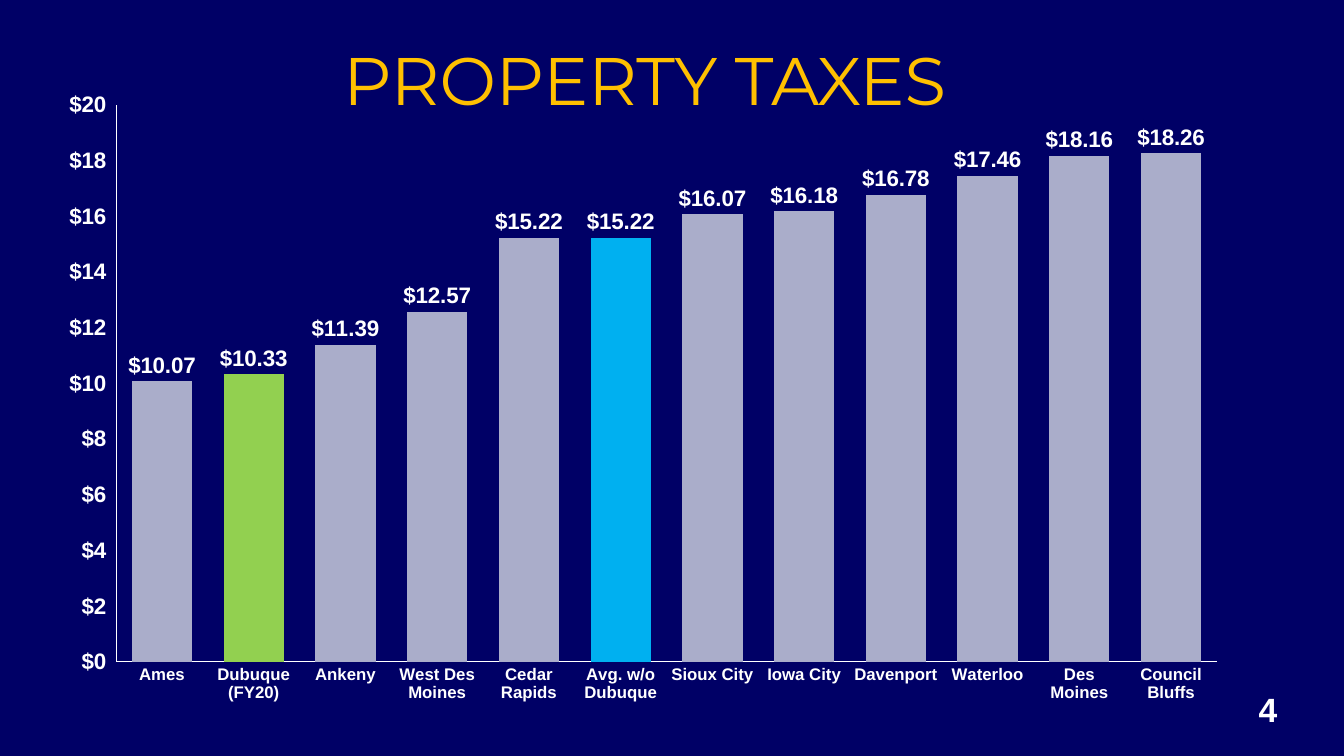
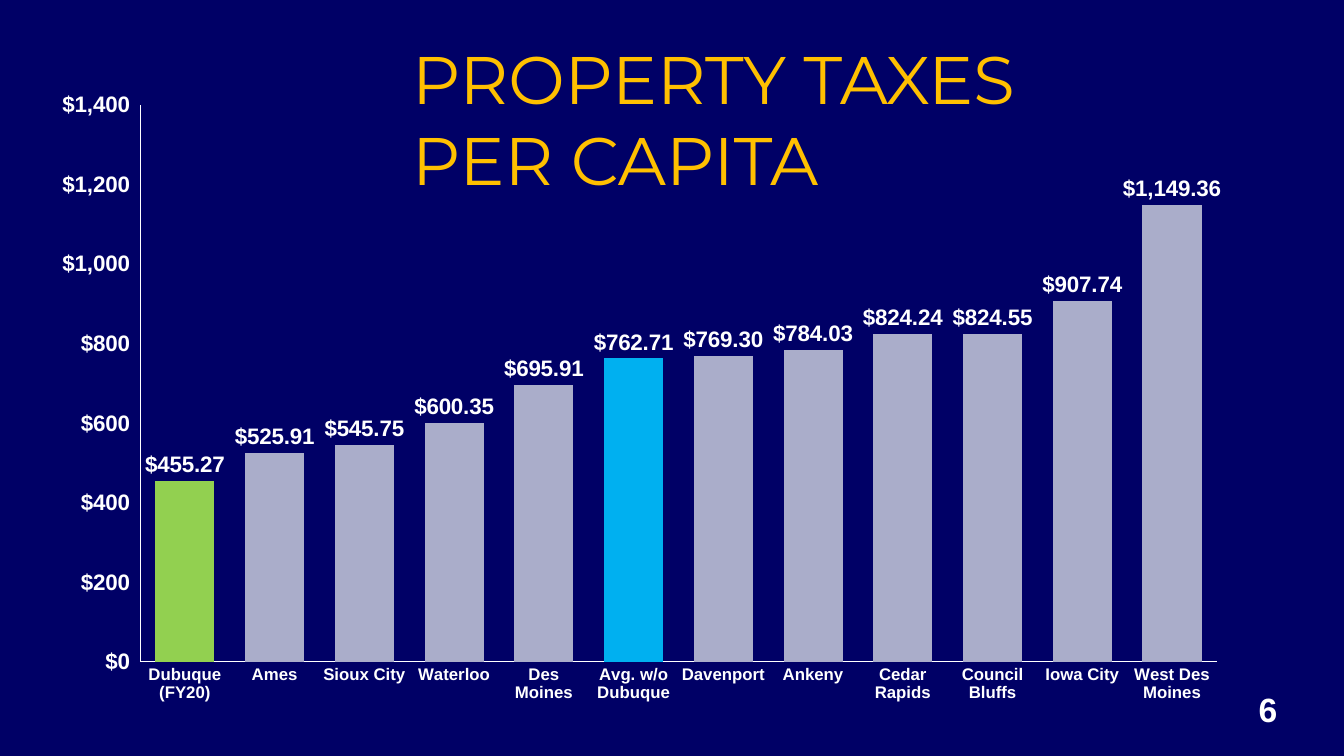
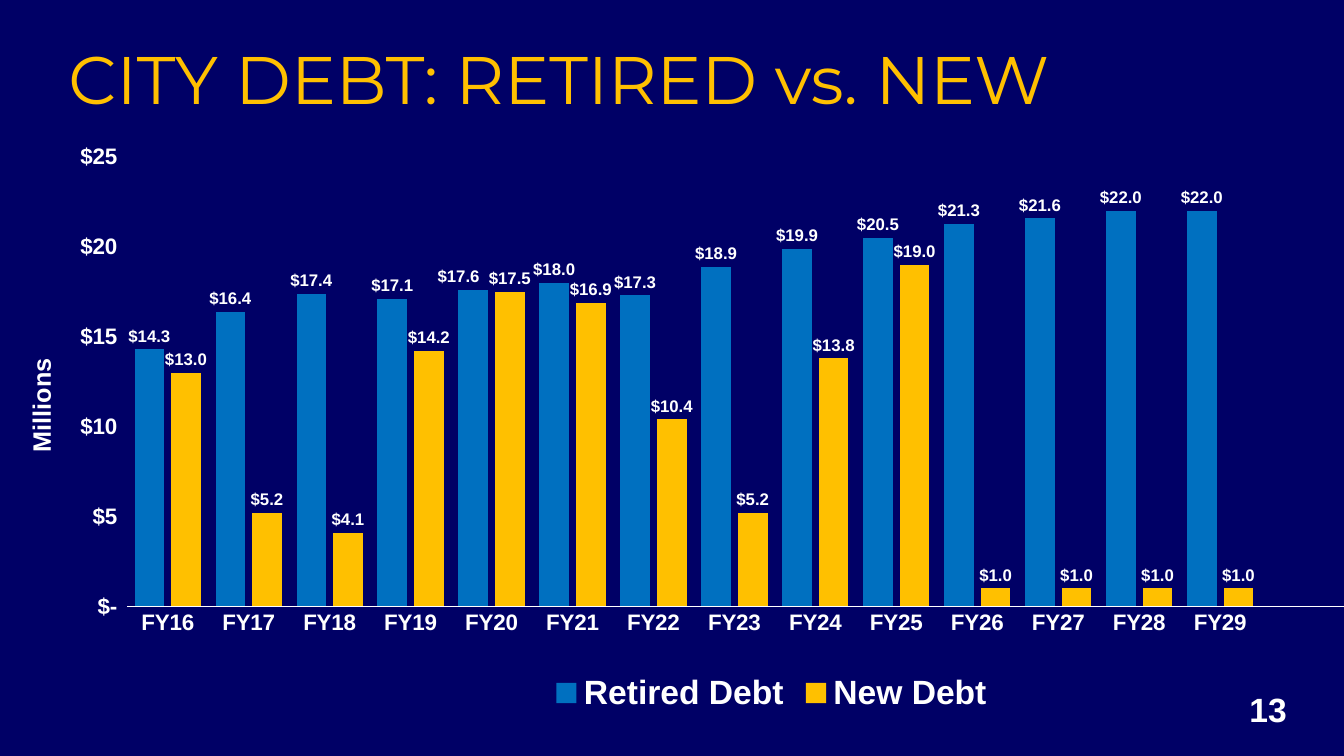
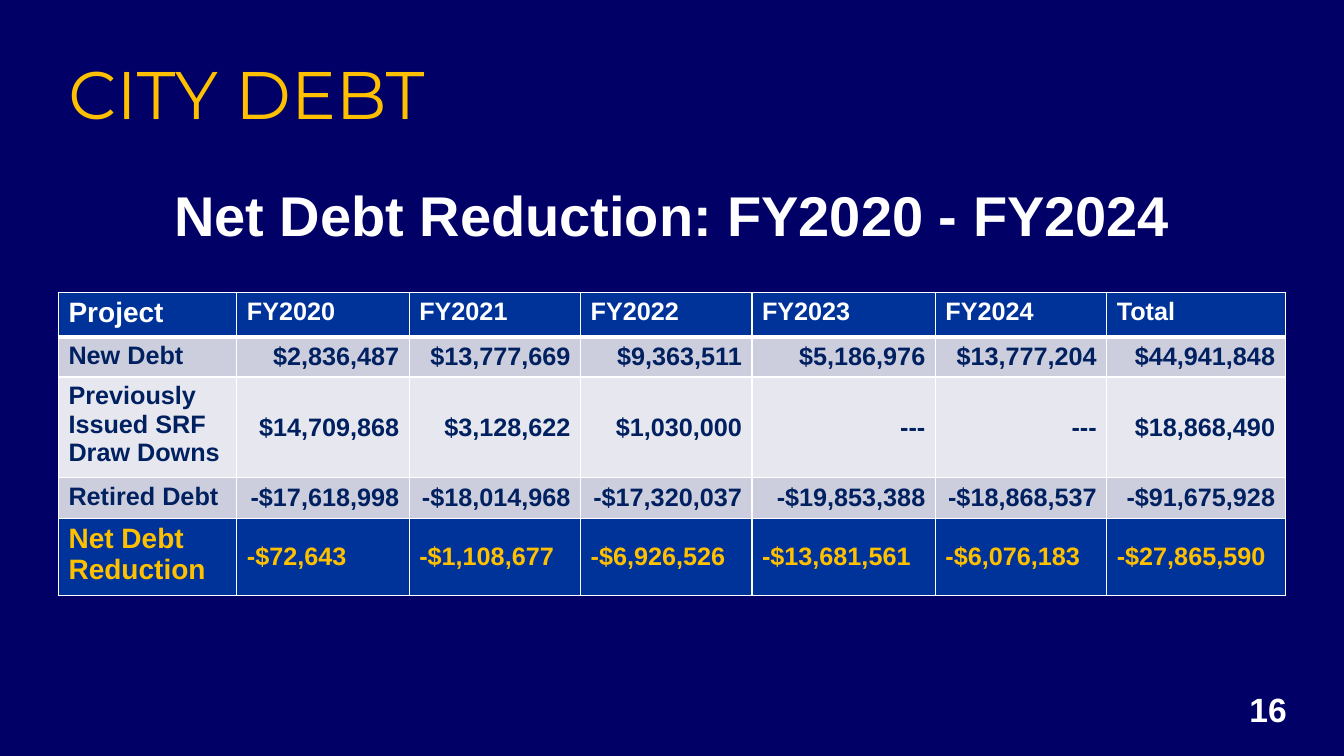
from lxml import etree
from pptx import Presentation
from pptx import util as u
from pptx.chart.data import CategoryChartData
from pptx.dml.color import RGBColor
from pptx.enum import chart as ch
from pptx.enum import text as tx
from pptx.oxml import parse_xml
from pptx.oxml.ns import nsdecls, qn

INK = {
    "navy": "000066", "white": "FFFFFF", "gold": "FFC000", "grey": "AAADCA",
    "green": "92D050", "sky": "00B0F0", "blue": "0070C0", "royal": "003399",
    "dark": "002060", "band": "CCCEDE", "pale": "E7E8EF",
}
WIDE, HIGH = u.Inches(13.33), u.Inches(7.5)
SANS, HEAD = "Arial", "Montserrat"
LEFT, MID, RIGHT = tx.PP_ALIGN.LEFT, tx.PP_ALIGN.CENTER, tx.PP_ALIGN.RIGHT

# Boxes are left, top, width and height in percent of the slide.
RANK_BOX = (3.3, 10.53, 89.03, 83.73)
DEBT_BOX = (2.93, 12.53, 108.98, 82.53)
WHOLE, CENTS, TENTHS = '"$"#,##0_)', '"$"#,##0.00', '"$"#,##0.0'


def rgb(name):
    return RGBColor.from_string(INK[name])


def scale(box):
    return [int(side * part / 100) for side, part in zip((WIDE, HIGH) * 2, box)]


def style(font, size, ink="white", bold=True, face=SANS):
    font.size, font.bold, font.name = u.Pt(size), bold, face
    font.color.rgb = rgb(ink)


def write(para, words, align, *look):
    """Add lines of text, one run each, to a paragraph."""
    para.alignment = align
    for i, line in enumerate(words.split("\n")):
        if i:
            para.add_line_break()
        run = para.add_run()
        run.text = line
        style(run.font, *look)


def label(slide, box, words, align, *look):
    shape = slide.shapes.add_textbox(*scale(box))
    shape.text_frame.word_wrap = True
    write(shape.text_frame.paragraphs[0], words, align, *look)
    return shape


def start(deck, page, title, box, align=LEFT):
    """Add a slide with its title and page number."""
    slide = deck.slides.add_slide(deck.slide_layouts[6])
    label(slide, box, title, align, 48, "gold", False, HEAD)
    label(slide, (90.6, 90.53, 7.5, 6.67), page, MID, 24)
    return slide


def layout(modes, **shares):
    """Build a manual chart layout from shares of the chart."""
    tags = [f'<c:{k} val="{v}"/>' for k, v in {**modes, **shares}.items()]
    return parse_xml(f'<c:layout {nsdecls("c")}><c:manualLayout>'
                     f'{"".join(tags)}</c:manualLayout></c:layout>')


def set_plot(chart, x, y, w, h):
    area = chart.plots[0].categories and chart.element.find(
        f'{qn("c:chart")}/{qn("c:plotArea")}')
    for old in area.findall(qn("c:layout")):
        area.remove(old)
    modes = dict(layoutTarget="inner", xMode="edge", yMode="edge")
    area.insert(0, layout(modes, x=x, y=y, w=w, h=h))


def set_axis(axis, size, line=True):
    axis.has_major_gridlines = False
    axis.major_tick_mark = axis.minor_tick_mark = ch.XL_TICK_MARK.NONE
    style(axis.tick_labels.font, size)
    if line:
        axis.format.line.color.rgb = rgb("white")
        axis.format.line.width = u.Pt(0.75)
    else:
        axis.format.line.fill.background()


def columns(slide, box, plot, cats, rows, top, step, gap, over, sizes, form,
            zero=""):
    """Add a column chart; rows hold name, colour and values,
    sizes are for categories and value labels."""
    data = CategoryChartData(number_format=form)
    data.categories = cats
    for name, _, vals in rows:
        data.add_series(name, vals)
    frame = slide.shapes.add_chart(
        ch.XL_CHART_TYPE.COLUMN_CLUSTERED, *scale(box), data)
    chart = frame.chart
    chart.has_title = chart.has_legend = False
    style(chart.font, 10, bold=False)
    set_plot(chart, *plot)
    set_axis(chart.category_axis, sizes[0])
    axis = chart.value_axis
    set_axis(axis, 16, not zero)
    axis.minimum_scale, axis.maximum_scale, axis.major_unit = 0, top, step
    axis.tick_labels.number_format = WHOLE + zero
    axis.tick_labels.number_format_is_linked = False
    bars = chart.plots[0]
    bars.gap_width, bars.overlap, bars.vary_by_categories = gap, over, False
    for series, (_, ink, _) in zip(bars.series, rows):
        series.format.fill.solid()
        series.format.fill.fore_color.rgb = rgb(ink)
        tags = series.data_labels
        tags.show_value = True
        tags.position = ch.XL_LABEL_POSITION.OUTSIDE_END
        tags.number_format, tags.number_format_is_linked = form, False
        style(tags.font, sizes[1])
    return chart


def rank(slide, pairs, left, top, step):
    """Rank the cities, with the home city and the average picked out."""
    cats, vals = zip(*pairs)
    chart = columns(slide, RANK_BOX, (left, 0.04, 0.98 - left, 0.88), cats,
                    [("Series 1", "grey", vals)], top, step, 52, -70,
                    (12, 16), CENTS)
    picks = {"Dubuque (FY20)": "green", "Avg. w/o Dubuque": "sky"}
    for city, ink in picks.items():
        fill = chart.plots[0].series[0].points[cats.index(city)].format.fill
        fill.solid()
        fill.fore_color.rgb = rgb(ink)


def nudge(series, at, shift):
    """Move one value label sideways by a share of the chart."""
    tag = series.points[at].data_label
    style(tag.font, 12)
    tag.position = ch.XL_LABEL_POSITION.OUTSIDE_END
    node = next(series.data_labels.font and
                series.points[at].data_label.font and
                series.format and series_nodes(series))
    node.insert(1, layout({}, x=shift, y=0))


def series_nodes(series):
    return series.data_labels._element.iter(qn("c:dLbl"))


def debt(slide, old, new):
    years = [f"FY{n}" for n in range(16, 30)]
    blank = [None] * 3
    chart = columns(slide, DEBT_BOX, (0.06, 0.1, 0.94, 0.72),
                    years + [""] * len(blank),
                    [("Retired Debt", "blue", old + blank),
                     ("New Debt", "gold", new + blank)],
                    25, 5, 50, -24, (16, 12), TENTHS, ';;"$-"_)')
    chart.has_legend = True
    chart.legend.position = ch.XL_LEGEND_POSITION.BOTTOM
    chart.legend.include_in_layout = False
    style(chart.legend.font, 24)
    nudge(chart.plots[0].series[0], years.index("FY20"), -0.01)
    side = label(slide, (-9.15, 50.93, 24.38, 5.33), "Millions", MID, 18)
    side.rotation = 270


def edge(cell, **points):
    """Draw white borders; points maps L, R, T, B to a width."""
    props = cell._tc.get_or_add_tcPr()
    for i, side in enumerate("LRTB"):
        line = etree.Element(qn(f"a:ln{side}"), w=str(u.Pt(points.get(side, 1))))
        fill = etree.SubElement(line, qn("a:solidFill"))
        etree.SubElement(fill, qn("a:srgbClr"), val=INK["white"])
        props.insert(i, line)


def grid(slide, box, wide, high, rows):
    """Add the table; wide and high are weights of columns and rows."""
    x, y, w, h = scale(box)
    table = slide.shapes.add_table(len(rows), len(wide), x, y, w, h).table
    table.horz_banding = False
    for col, part in zip(table.columns, wide):
        col.width = int(w * part / sum(wide))
    for row, part in zip(table.rows, high):
        row.height = int(h * part / sum(high))
    last = len(rows) - 1
    fills = ["royal", "band", "pale", "band", "royal"]
    for r, row in enumerate(rows):
        ink = {0: "white", last: "gold"}.get(r, "dark")
        for c, words in enumerate(row):
            cell = table.cell(r, c)
            cell.fill.solid()
            cell.fill.fore_color.rgb = rgb(fills[r])
            edge(cell, B=1 if r else 3, T=3 if r == 1 else 1)
            if r and c:
                cell.vertical_anchor = tx.MSO_ANCHOR.MIDDLE
            size = 20 if c == 0 and r in (0, last) else 18
            align = RIGHT if c and 0 < r < last else LEFT
            write(cell.text_frame.paragraphs[0], words, align, size, ink)


RATES = [
    ("Ames", 10.07), ("Dubuque (FY20)", 10.33), ("Ankeny", 11.39),
    ("West Des Moines", 12.57), ("Cedar Rapids", 15.22),
    ("Avg. w/o Dubuque", 15.22), ("Sioux City", 16.07), ("Iowa City", 16.18),
    ("Davenport", 16.78), ("Waterloo", 17.46), ("Des Moines", 18.16),
    ("Council Bluffs", 18.26),
]
HEADS = [
    ("Dubuque (FY20)", 455.27), ("Ames", 525.91), ("Sioux City", 545.75),
    ("Waterloo", 600.35), ("Des Moines", 695.91),
    ("Avg. w/o Dubuque", 762.71), ("Davenport", 769.3), ("Ankeny", 784.03),
    ("Cedar Rapids", 824.24), ("Council Bluffs", 824.55),
    ("Iowa City", 907.74), ("West Des Moines", 1149.36),
]
OLD = [14.3, 16.4, 17.4, 17.1, 17.6, 18, 17.3, 18.9, 19.9, 20.5, 21.3, 21.6,
       22, 22]
NEW = [13, 5.2, 4.1, 14.2, 17.5, 16.9, 10.4, 5.2, 13.8, 19, 1, 1, 1, 1]
SUMS = [
    ["Project", "FY2020", "FY2021", "FY2022", "FY2023", "FY2024", "Total"],
    ["New Debt", "$2,836,487", "$13,777,669", "$9,363,511", "$5,186,976",
     "$13,777,204", "$44,941,848"],
    ["Previously Issued SRF Draw Downs", "$14,709,868", "$3,128,622",
     "$1,030,000", "---", "---", "$18,868,490"],
    ["Retired Debt", "-$17,618,998", "-$18,014,968", "-$17,320,037",
     "-$19,853,388", "-$18,868,537", "-$91,675,928"],
    ["Net Debt Reduction", "-$72,643", "-$1,108,677", "-$6,926,526",
     "-$13,681,561", "-$6,076,183", "-$27,865,590"],
]


def main():
    deck = Presentation()
    deck.slide_width, deck.slide_height = WIDE, HIGH
    back = deck.slide_master.background.fill
    back.solid()
    back.fore_color.rgb = rgb("navy")

    slide = start(deck, "4", "PROPERTY TAXES", (3.53, 4.4, 88.88, 16.67), MID)
    rank(slide, RATES, 0.06, 20, 2)

    slide = start(deck, "6", "PROPERTY TAXES\nPER CAPITA",
                  (29.93, 4.27, 65.78, 16.67))
    rank(slide, HEADS, 0.08, 1400, 200)

    slide = start(deck, "13", "CITY DEBT: RETIRED vs. NEW",
                  (4.35, 4.27, 91.28, 16.67))
    debt(slide, OLD, NEW)

    slide = start(deck, "16", "CITY DEBT", (4.35, 6.27, 91.28, 11.87))
    label(slide, (10.95, 23.2, 78.08, 10.27),
          "Net Debt Reduction: FY2020 - FY2024", MID, 40)
    grid(slide, (4.35, 38.67, 91.28, 40.13),
         [1.77, 1.71, 1.7, 1.7, 1.82, 1.7, 1.77],
         [0.44, 0.4, 1, 0.4, 0.77], SUMS)
    deck.save("out.pptx")


if __name__ == "__main__":
    main()
